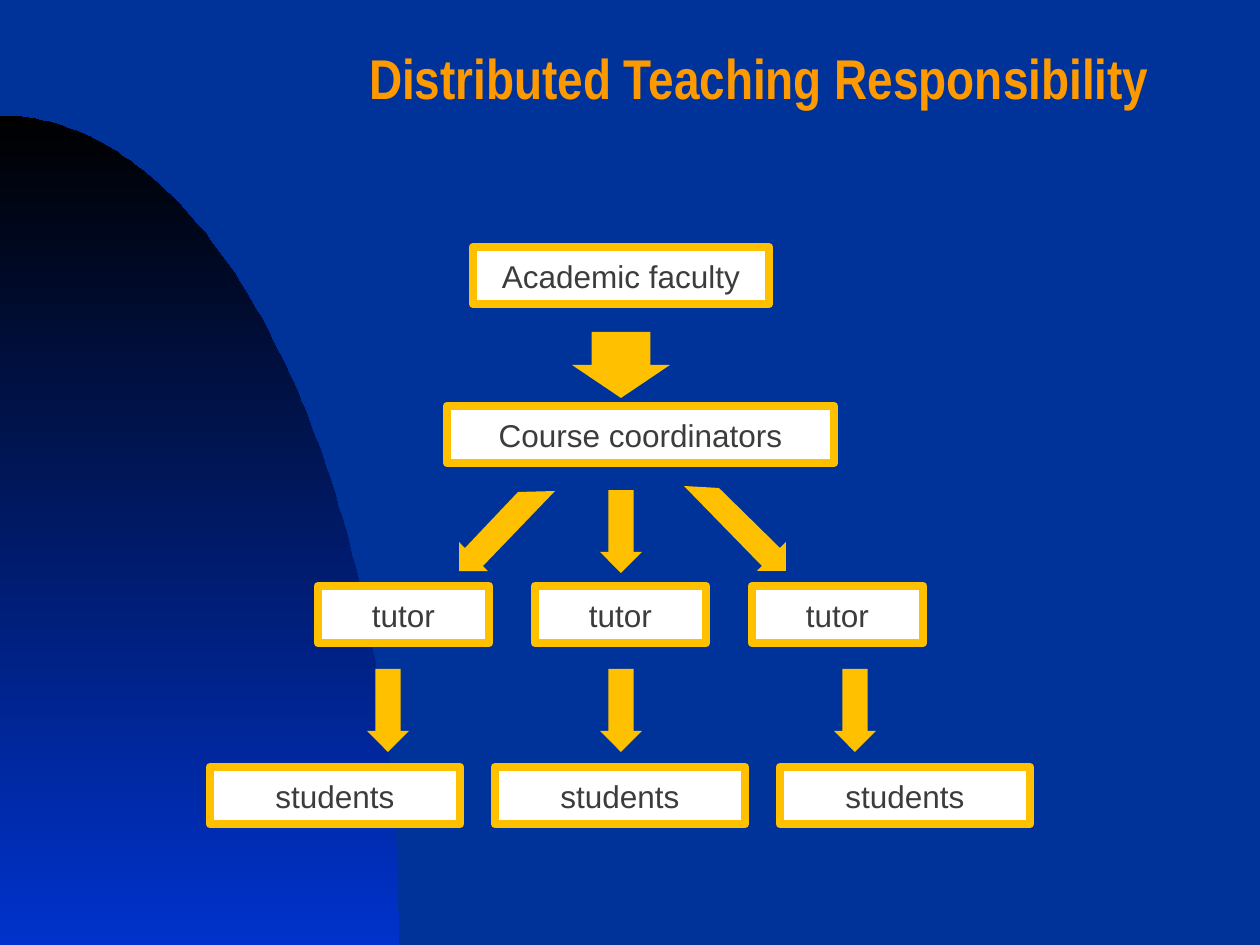
"""Build the slide on distributed teaching responsibility."""
import math

from pptx import Presentation
from pptx import util as u
from pptx.dml.color import RGBColor
from pptx.enum import shapes, text

PX = u.Inches(1) / 126
GOLD = "FFC000"


def px(*lengths):
    return [u.Emu(round(length * PX)) for length in lengths]


def color(hex_string):
    return RGBColor.from_string(hex_string)


presentation = Presentation()
presentation.slide_width, presentation.slide_height = px(1260, 945)
slide = presentation.slides.add_slide(presentation.slide_layouts[5])
slide.background.fill.solid()
slide.background.fill.fore_color.rgb = color("003399")

title = slide.shapes.title
title.left, title.top, title.width, title.height = px(193, 10, 957, 113)
frame = title.text_frame
frame.text = "Distributed Teaching Responsibility"
frame.word_wrap = True
frame.auto_size = text.MSO_AUTO_SIZE.NONE
frame.vertical_anchor = text.MSO_ANCHOR.TOP
frame.margin_left, frame.margin_top, frame.margin_right, frame.margin_bottom = px(0, 33, 0, 0)
paragraph = frame.paragraphs[0]
paragraph.alignment = text.PP_ALIGN.RIGHT
font = paragraph.runs[0].font
font.name, font.size, font.bold = "Arial Narrow", u.Pt(32), True
font.color.rgb = color("FF9900")

curve = [
    (round(399 * math.sin(math.radians(angle))), round(945 - 829 * math.cos(math.radians(angle))))
    for angle in range(91)
]
builder = slide.shapes.build_freeform(0, 945, scale=PX)
builder.add_line_segments(curve, close=True)
arc = builder.convert_to_shape()
arc.shadow.inherit = False
arc.line.fill.background()
arc.fill.gradient()
arc.fill.gradient_angle = 90
for stop, shade in zip(arc.fill.gradient_stops, ("0033CC", "000000")):
    stop.color.rgb = color(shade)

arrows = []
down_arrows = [(572, 332, 98, 66), (600, 490, 42, 83)]
down_arrows += [(left, 669, 42, 83) for left in (367, 600, 834)]
for bounds in down_arrows:
    arrow = slide.shapes.add_shape(shapes.MSO_SHAPE.DOWN_ARROW, *px(*bounds))
    arrow.adjustments[0], arrow.adjustments[1] = 0.6, 0.5
    arrows.append(arrow)

diagonals = [
    [(459, 571), (459, 542), (465, 548), (518, 492), (555, 491), (483, 566), (488, 571)],
    [(786, 571), (757, 571), (762, 566), (684, 486), (719, 488), (780, 548), (786, 542)],
]
for start, *points in diagonals:
    builder = slide.shapes.build_freeform(*start, scale=PX)
    builder.add_line_segments(points, close=True)
    arrows.append(builder.convert_to_shape())

for arrow in arrows:
    arrow.shadow.inherit = False
    arrow.fill.solid()
    arrow.fill.fore_color.rgb = color(GOLD)
    arrow.line.fill.background()

boxes = [("Academic faculty", 473, 247, 296), ("Course coordinators", 447, 406, 387)]
for column in range(3):
    boxes.append(("tutor", 318 + 217 * column, 586, 171))
    boxes.append(("students", 210 + 285 * column, 767, 250))

for label, left, top, width in boxes:
    box = slide.shapes.add_shape(shapes.MSO_SHAPE.RECTANGLE, *px(left, top, width, 57))
    box.shadow.inherit = False
    box.fill.solid()
    box.fill.fore_color.rgb = color("FFFFFF")
    box.line.color.rgb = color(GOLD)
    box.line.width = u.Pt(5)
    frame = box.text_frame
    frame.text = label
    frame.word_wrap = True
    frame.vertical_anchor = text.MSO_ANCHOR.MIDDLE
    frame.margin_left, frame.margin_top, frame.margin_right, frame.margin_bottom = px(6, 6, 6, 6)
    paragraph = frame.paragraphs[0]
    paragraph.alignment = text.PP_ALIGN.CENTER
    font = paragraph.runs[0].font
    font.name, font.size = "Arial", u.Pt(18)
    font.color.rgb = color("3C3C3C")

presentation.save("out.pptx")
